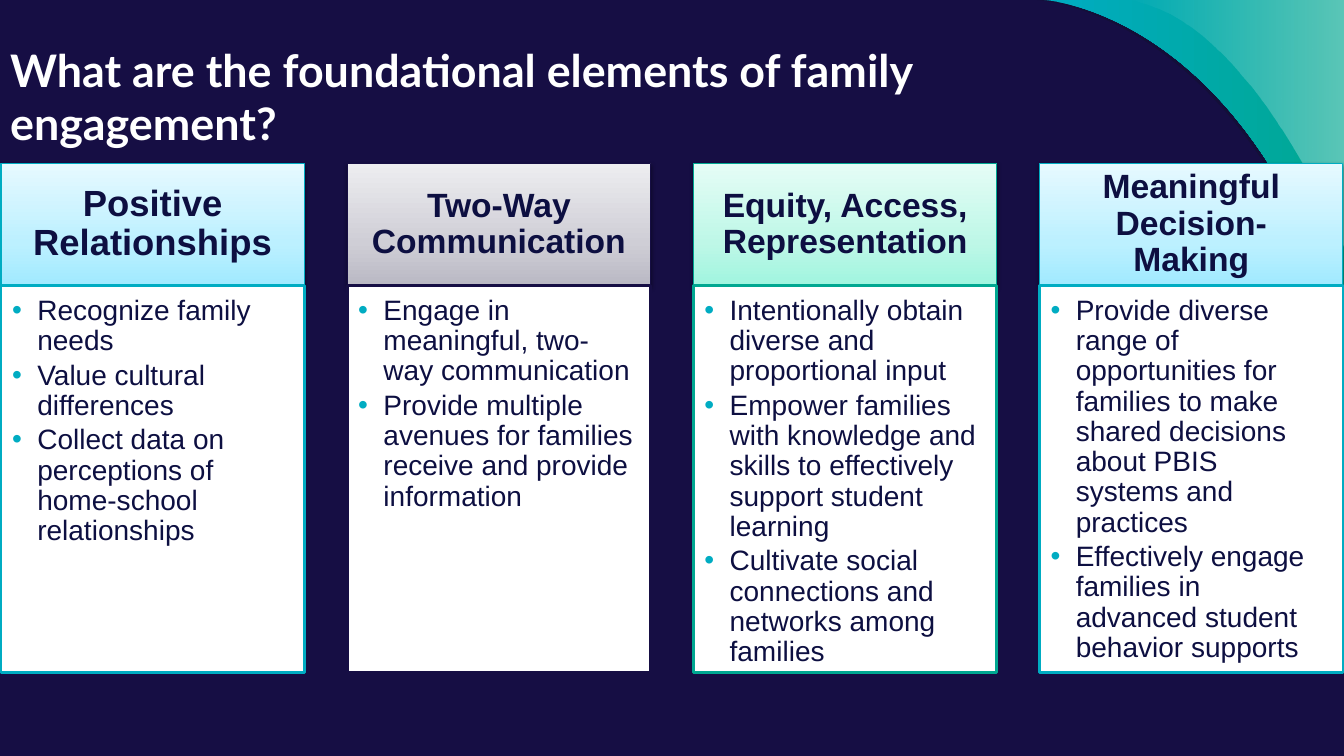
from lxml import etree
from pptx import Presentation
from pptx.dml.color import RGBColor
from pptx.enum.shapes import MSO_SHAPE
from pptx.enum.text import MSO_ANCHOR, MSO_AUTO_SIZE, PP_ALIGN
from pptx.oxml.ns import qn
from pptx.util import Inches, Pt

RECTANGLE = MSO_SHAPE.RECTANGLE
TOP, MIDDLE = MSO_ANCHOR.TOP, MSO_ANCHOR.MIDDLE
LEFT, CENTER = PP_ALIGN.LEFT, PP_ALIGN.CENTER
NO_AUTOFIT = MSO_AUTO_SIZE.NONE

NAVY = RGBColor(0x16, 0x0E, 0x44)
INK = RGBColor(0x0D, 0x0F, 0x41)
SHADE = RGBColor(0x12, 0x10, 0x2F)
TEAL = RGBColor(0x00, 0xAC, 0xC2)
GREEN = RGBColor(0x00, 0xA7, 0x91)
WHITE = RGBColor(0xFF, 0xFF, 0xFF)
BLACK = RGBColor(0x00, 0x00, 0x00)
BLUE_TINTS = [RGBColor(0xA1, 0xEA, 0xFF), RGBColor(0xBC, 0xF0, 0xFF), RGBColor(0xE6, 0xF9, 0xFF)]
GREY_TINTS = [RGBColor(0xBA, 0xB9, 0xC4), RGBColor(0xCF, 0xCE, 0xD6), RGBColor(0xED, 0xED, 0xF0)]
MINT_TINTS = [RGBColor(0xA0, 0xF5, 0xDF), RGBColor(0xBE, 0xF7, 0xE7), RGBColor(0xE5, 0xFD, 0xF6)]

SLIDE_W, SLIDE_H = 13.33, 7.5
COLUMN_W, MARGIN = 3.01, 0.01
HEADER_TOP, HEADER_H, LIST_H = 1.62, 1.21, 3.84


def fill_gradient(shape, stops, angle):
    """Linear gradient; each stop is (position %, colour, opacity %)."""
    shape.fill.gradient()
    gradient = shape._element.spPr.find(qn("a:gradFill"))
    gradient.clear()
    stop_list = etree.SubElement(gradient, qn("a:gsLst"))
    for position, color, opacity in stops:
        stop = etree.SubElement(stop_list, qn("a:gs"), pos=str(position * 1000))
        rgb = etree.SubElement(stop, qn("a:srgbClr"), val=str(color))
        etree.SubElement(rgb, qn("a:alpha"), val=str(opacity * 1000))
    etree.SubElement(gradient, qn("a:lin"), ang=str(angle * 60000), scaled="0")


def write_text(shape, paragraphs, insets, anchor, align, spacing, after, font, bullet=False):
    """Fill a text frame, one paragraph per string."""
    frame = shape.text_frame
    frame.word_wrap = True
    frame.auto_size = NO_AUTOFIT
    frame.vertical_anchor = anchor
    for side, inset in zip(("left", "top", "right", "bottom"), insets):
        setattr(frame, f"margin_{side}", Inches(inset))
    for i, text in enumerate(paragraphs):
        paragraph = frame.add_paragraph() if i else frame.paragraphs[0]
        if bullet:
            properties = paragraph._p.get_or_add_pPr()
            properties.set("marL", str(Inches(0.25)))
            properties.set("indent", str(Inches(-0.25)))
            color = etree.SubElement(properties, qn("a:buClr"))
            etree.SubElement(color, qn("a:srgbClr"), val=str(TEAL))
            etree.SubElement(properties, qn("a:buFont"), typeface=font["name"])
            etree.SubElement(properties, qn("a:buChar"), char="•")
        paragraph.alignment = align
        paragraph.line_spacing = spacing
        paragraph.space_before = Pt(0)
        paragraph.space_after = Pt(after)
        run = paragraph.add_run()
        run.text = text
        for target in (paragraph.font, run.font):
            target.color.rgb = font["color"]
            for key in ("name", "size", "bold"):
                setattr(target, key, font[key])


presentation = Presentation()
presentation.slide_width = Inches(SLIDE_W)
presentation.slide_height = Inches(SLIDE_H)
slide = presentation.slides.add_slide(presentation.slide_layouts[5])
slide.background.fill.solid()
slide.background.fill.fore_color.rgb = NAVY

# Corner swoosh: Bezier control points from the top edge to the right edge
swooshes = [
    ([(10.29, 0), (10.29, 0), (12.35, 0.11), (13.33, 3.39)], [(0, SHADE, 54), (100, SHADE, 54)]),
    ([(10.36, 0), (10.36, 0), (12.37, 0.11), (13.33, 3.31)], [(0, TEAL, 100), (100, GREEN, 100)]),
    ([(11.16, 0), (12.41, 0.15), (13.33, 2.45), (13.33, 2.45)], [(0, WHITE, 0), (100, WHITE, 36)]),
]
for controls, stops in swooshes:
    start, *bends = [(Inches(x), Inches(y)) for x, y in controls]
    builder = slide.shapes.build_freeform(*start)
    builder.add_line_segments([bends[-1], (Inches(SLIDE_W), 0)], close=True)
    swoosh = builder.convert_to_shape()
    swoosh.shadow.inherit = False
    swoosh.line.fill.background()
    fill_gradient(swoosh, stops, 0)

    # Bend the first edge into a curve
    edge = next(swoosh._element.spPr.iter(qn("a:lnTo")))
    curve = etree.Element(qn("a:cubicBezTo"))
    for x, y in bends:
        etree.SubElement(curve, qn("a:pt"), x=str(x - swoosh.left), y=str(y - swoosh.top))
    edge.getparent().replace(edge, curve)

# Title
title = slide.shapes.title
title.left, title.top, title.width, title.height = map(Inches, (0, 0.32, 11.7, 0.92))
write_text(title, ["What are the foundational elements of family engagement?"],
           [0.1] * 4, TOP, LEFT, 1.0, 0,
           {"name": "Lato", "size": Pt(32), "bold": True, "color": WHITE})

# Four elements: heading, heading size, tints, outline, points
elements = [
    ("Positive Relationships", 26, BLUE_TINTS, TEAL,
     ["Recognize family needs",
      "Value cultural differences",
      "Collect data on perceptions of home-school relationships"]),
    ("Two-Way Communication", 24, GREY_TINTS, NAVY,
     ["Engage in meaningful, two-way communication",
      "Provide multiple avenues for families receive and provide information"]),
    ("Equity, Access, Representation", 24, MINT_TINTS, GREEN,
     ["Intentionally obtain diverse and proportional input",
      "Empower families with knowledge and skills to effectively support student learning",
      "Cultivate social connections and networks among families"]),
    ("Meaningful Decision-Making", 24, BLUE_TINTS, TEAL,
     ["Provide diverse range of opportunities for families to make shared decisions "
      "about PBIS systems and practices",
      "Effectively engage families in advanced student behavior supports"]),
]
pitch = (SLIDE_W - 2 * MARGIN - COLUMN_W) / (len(elements) - 1)
for column, (heading, heading_size, tints, outline, points) in enumerate(elements):
    left = MARGIN + column * pitch
    header = slide.shapes.add_shape(RECTANGLE, *map(Inches, (left, HEADER_TOP, COLUMN_W, HEADER_H)))
    details = slide.shapes.add_shape(
        RECTANGLE, *map(Inches, (left, HEADER_TOP + HEADER_H, COLUMN_W, LIST_H)))
    for part, weight in ((header, 0.75), (details, 2)):
        part.shadow.inherit = False
        part.line.color.rgb = outline
        part.line.width = Pt(weight)

    # Heading with gradient and soft shadow
    fill_gradient(header, [(at, tint, 100) for at, tint in zip((0, 35, 100), tints)], 270)
    effects = header._element.spPr.find(qn("a:effectLst"))
    shadow = etree.SubElement(effects, qn("a:outerShdw"), blurRad=str(Pt(3.1)),
                              dist=str(Pt(1.6)), dir="5400000", rotWithShape="0")
    shadow_color = etree.SubElement(shadow, qn("a:srgbClr"), val=str(BLACK))
    etree.SubElement(shadow_color, qn("a:alpha"), val="38000")
    write_text(header, [heading], (0.19, 0.11, 0.19, 0.11), MIDDLE, CENTER, 0.9, 0,
               {"name": "Arial", "size": Pt(heading_size), "bold": True, "color": INK})

    # Bulleted points
    details.fill.solid()
    details.fill.fore_color.rgb = WHITE
    write_text(details, points, (0.11, 0.11, 0.16, 0.17), TOP, LEFT, 0.9, 3,
               {"name": "Arial", "size": Pt(20), "bold": False, "color": INK}, bullet=True)

presentation.save("out.pptx")
